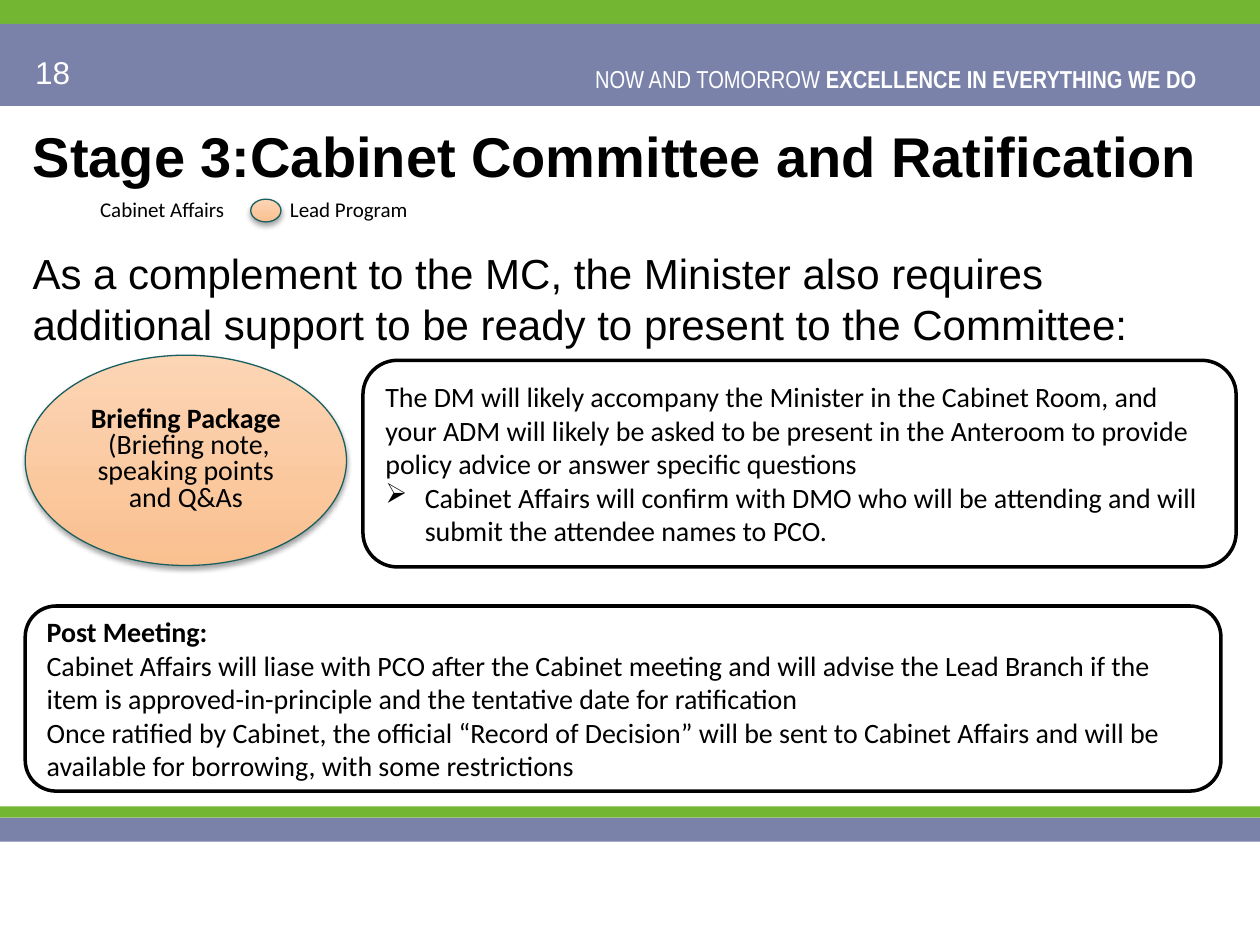
from lxml import etree
from pptx import Presentation
from pptx.dml.color import RGBColor
from pptx.enum import shapes, text
from pptx.oxml import ns
from pptx.util import Pt

BLUE, GREEN, WHITE, BLACK, TEAL = "7A82AA", "73B632", "FFFFFF", "000000", "1A5F5F"
PEACH = ("FCD5B5", "FAC090")
SLIDE_WIDTH = 720


def colour(value):
    """Turn a hex string into a colour."""
    return RGBColor.from_string(value)


def child(parent, tag, **attributes):
    """Append a DrawingML element and return it."""
    return etree.SubElement(parent, ns.qn(tag), {k: str(v) for k, v in attributes.items()})


def write(shape, paragraphs, size=16, font="Calibri", ink=BLACK, bold=False,
          align=text.PP_ALIGN.LEFT, anchor=text.MSO_ANCHOR.TOP, spacing=None, inset=7.2):
    """Fill a shape with paragraphs, each a string or a list of (string, bold) runs."""
    frame = shape.text_frame
    frame.word_wrap = True
    frame.vertical_anchor = anchor
    frame.margin_left = Pt(inset)
    for index, content in enumerate(paragraphs):
        paragraph = frame.paragraphs[0] if index == 0 else frame.add_paragraph()
        paragraph.alignment = align
        if spacing:
            paragraph.line_spacing = Pt(spacing)
        for words, heavy in [(content, bold)] if isinstance(content, str) else content:
            run = paragraph.add_run()
            run.text = words
            run.font.size = Pt(size)
            run.font.name = font
            run.font.bold = heavy
            run.font.color.rgb = colour(ink)
    return frame


def add_text(slide, box, paragraphs, **style):
    """Add a text box."""
    return write(slide.shapes.add_textbox(*map(Pt, box)), paragraphs, **style)


def add_panel(slide, box, kind, fill, line=None, weight=2):
    """Add a preset shape with a plain fill and an optional outline."""
    panel = slide.shapes.add_shape(kind, *map(Pt, box))
    panel.shadow.inherit = False
    panel.fill.solid()
    panel.fill.fore_color.rgb = colour(fill)
    if line:
        panel.line.color.rgb = colour(line)
        panel.line.width = Pt(weight)
    else:
        panel.line.fill.background()
    return panel


def add_program_oval(slide, box):
    """Add a shaded oval that marks work of the lead program."""
    oval = add_panel(slide, box, shapes.MSO_SHAPE.OVAL, PEACH[0], TEAL, 0.75)
    oval.fill.gradient()
    oval.fill.gradient_angle = 270
    for stop, shade, position in zip(oval.fill.gradient_stops, PEACH, (0, 1)):
        stop.color.rgb = colour(shade)
        stop.position = position
    effects = oval._element.spPr.find(ns.qn("a:effectLst"))
    shadow = child(effects, "a:outerShdw", blurRad=Pt(3.1), dist=Pt(1.8),
                   dir=90 * 60000, rotWithShape=0)
    child(child(shadow, "a:srgbClr", val=BLACK), "a:alpha", val=35000)
    return oval


def add_bands(slide, top, bands):
    """Stack full-width colour bands, each a (height, colour) pair."""
    for height, fill in bands:
        add_panel(slide, (0, top, SLIDE_WIDTH, height), shapes.MSO_SHAPE.RECTANGLE, fill)
        top += height


def add_header(slide, top):
    """Add the top bands with the slide number and the motto."""
    add_bands(slide, top, [(13.7, GREEN), (46.8, BLUE)])
    add_text(slide, (331, top + 33.1, 360, 24.5),
             [[("NOW AND TOMORROW ", False), ("EXCELLENCE IN EVERYTHING WE DO", True)]],
             size=14, font="Arial Narrow", ink=WHITE, align=text.PP_ALIGN.RIGHT)
    add_text(slide, (13, top + 26.6, 168, 28.8), ["18"], size=18, font="Arial", ink=WHITE)


def add_title(slide, box):
    """Place the title placeholder."""
    title = slide.shapes.title
    title.left, title.top, title.width, title.height = map(Pt, box)
    write(title, ["Stage 3:Cabinet Committee and Ratification"], size=32, font="Arial",
          bold=True, anchor=text.MSO_ANCHOR.MIDDLE)


def add_legend(slide, left, top):
    """Add the legend of responsible groups."""
    frame = add_text(slide, (left, top, 217, 24.5), ["Cabinet Affairs\tLead Program"],
                     size=12, inset=22.6)
    frame.margin_top = Pt(5)
    tabs = child(frame.paragraphs[0]._p.get_or_add_pPr(), "a:tabLst")
    child(tabs, "a:tab", pos=Pt(108.5), algn="l")
    add_program_oval(slide, (left + 108.7, top + 6.5, 17.3, 13))


def add_briefing(slide, box):
    """Add the briefing package oval."""
    write(add_program_oval(slide, box),
          [[("Briefing Package", True)], " (Briefing note, speaking points and Q&As"],
          align=text.PP_ALIGN.CENTER, anchor=text.MSO_ANCHOR.MIDDLE, spacing=15)


def add_note(slide, box, paragraphs):
    """Add an outlined note with rounded corners."""
    note = add_panel(slide, box, shapes.MSO_SHAPE.ROUNDED_RECTANGLE, WHITE, BLACK)
    return write(note, paragraphs, anchor=text.MSO_ANCHOR.MIDDLE)


def add_attendance(slide, box):
    """Add the note on who attends the meeting."""
    frame = add_note(slide, box, [
        "The DM will likely accompany the Minister in the Cabinet Room, and your ADM will "
        "likely be asked to be present in the Anteroom to provide policy advice or answer "
        "specific questions",
        "Cabinet Affairs will confirm with DMO who will be attending and will submit the "
        "attendee names to PCO."])
    properties = frame.paragraphs[1]._p.get_or_add_pPr()
    properties.set("marL", str(Pt(22.5)))
    properties.set("indent", str(Pt(-22.5)))
    child(properties, "a:buFont", typeface="Wingdings")
    properties.remove(properties[-1])
    child(properties, "a:buChar", char="➢")


def add_post_meeting(slide, box):
    """Add the note on steps after the meeting."""
    add_note(slide, box, [
        [("Post Meeting:", True)],
        "Cabinet Affairs will liase with PCO after the Cabinet meeting and will advise the "
        "Lead Branch if the item is approved-in-principle and the tentative date for "
        "ratification",
        "Once ratified by Cabinet, the official “Record of Decision” will be sent to Cabinet "
        "Affairs and will be available for borrowing, with some restrictions"])


def main():
    """Build and save the slide."""
    deck = Presentation()
    deck.slide_width, deck.slide_height = Pt(SLIDE_WIDTH), Pt(540)
    slide = deck.slides.add_slide(deck.slide_layouts[5])
    add_header(slide, 0)
    add_bands(slide, 460.8, [(6.5, GREEN), (13.7, BLUE)])
    add_title(slide, (11.5, 62.6, 694.8, 52.6))
    add_text(slide, (11.5, 138.2, 694.8, 64),
             ["As a complement to the MC, the Minister also requires additional support to be "
              "ready to present to the Committee:"], size=24, font="Arial")
    add_briefing(slide, (14.4, 203, 183.6, 120.2))
    add_attendance(slide, (207.4, 205.9, 499, 118.1))
    add_legend(slide, 34.6, 107.3)
    add_post_meeting(slide, (14.4, 346.3, 683.3, 105.8))
    deck.save("out.pptx")


if __name__ == "__main__":
    main()
